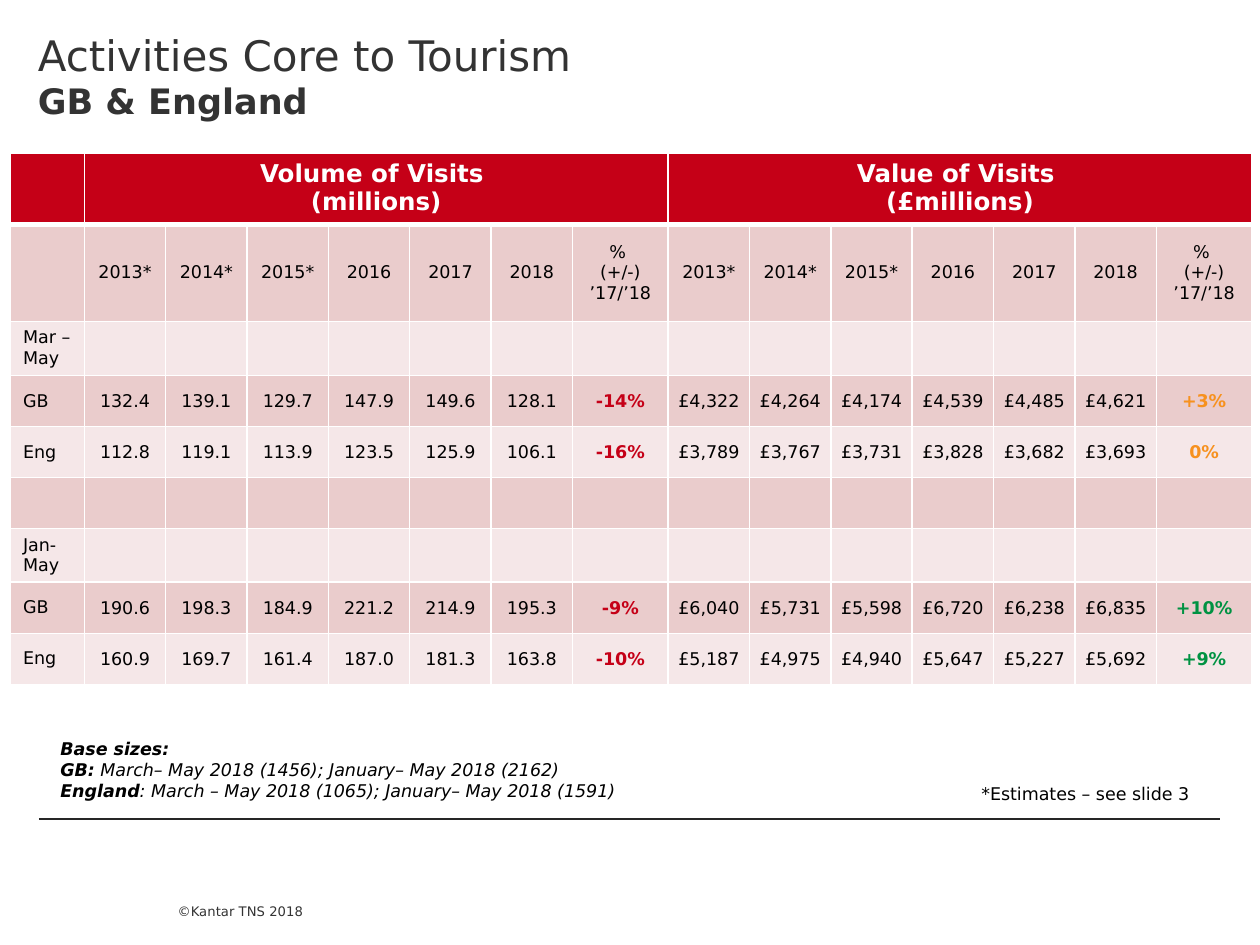
from dataclasses import dataclass
from typing import NamedTuple

from lxml.etree import SubElement
from pptx import Presentation
from pptx.dml.color import RGBColor
from pptx.enum.shapes import MSO_CONNECTOR
from pptx.enum.text import MSO_ANCHOR, MSO_AUTO_SIZE, PP_ALIGN
from pptx.oxml.ns import qn
from pptx.util import Pt


@dataclass(frozen=True)
class Theme:
    font: str = "DejaVu Sans"
    red: str = "C50017"
    amber: str = "F7911E"
    green: str = "009242"
    dark_band: str = "EACCCC"
    light_band: str = "F5E7E8"
    white: str = "FFFFFF"
    black: str = "000000"
    gray: str = "333333"
    rule: str = "262626"
    title: float = 24
    subtitle: float = 20
    heading: float = 14
    body: float = 10
    footer: float = 7.5


THEME = Theme()


class Span(NamedTuple):
    text: str
    size: float = THEME.body
    color: str = THEME.black
    bold: bool = False
    italic: bool = False


class Note(NamedTuple):
    box: tuple[float, float, float, float]
    paragraphs: list[list[Span]]
    frame: dict


class Season(NamedTuple):
    label: str
    anchor: MSO_ANCHOR
    regions: list[tuple[str, str, str]]


def margins(left: float, top: float, right: float, bottom: float) -> dict:
    return {"margin_left": Pt(left), "margin_top": Pt(top),
            "margin_right": Pt(right), "margin_bottom": Pt(bottom)}


def apply(target, values: dict) -> None:
    for name, value in values.items():
        setattr(target, name, value)


def write(frame, paragraphs: list[list[Span]], align=PP_ALIGN.LEFT) -> None:
    for index, spans in enumerate(paragraphs):
        para = frame.add_paragraph() if index else frame.paragraphs[0]
        para.alignment = align
        for item in spans:
            for part, line in enumerate(item.text.split("\n")):
                if part:
                    para.add_line_break()
                span = para.add_run()
                span.text = line
                apply(span.font, {"name": THEME.font, "size": Pt(item.size),
                                  "bold": item.bold, "italic": item.italic})
                span.font.color.rgb = RGBColor.from_string(item.color)


def add_note(page, note: Note) -> None:
    box = page.shapes.add_textbox(*map(Pt, note.box))
    apply(box.text_frame, note.frame)
    write(box.text_frame, note.paragraphs)


def style_cell(cell, fill: str, top: float, bottom: float) -> None:
    properties = cell._tc.get_or_add_tcPr()
    for side, width in {"lnL": 1, "lnR": 1, "lnT": top, "lnB": bottom}.items():
        line = SubElement(properties, qn(f"a:{side}"), w=str(Pt(width)))
        solid = SubElement(line, qn("a:solidFill"))
        SubElement(solid, qn("a:srgbClr"), val=THEME.white)
    cell.fill.solid()
    cell.fill.fore_color.rgb = RGBColor.from_string(fill)


def change_color(text: str) -> str:
    """Falls are red, rises under 5% amber and larger rises green."""
    change = int(text.rstrip("%"))
    return THEME.red if change < 0 else THEME.amber if change < 5 else THEME.green


# Table content and grid
SEASONS = [
    Season("Mar – May", MSO_ANCHOR.TOP, [
        ("GB", "132.4 139.1 129.7 147.9 149.6 128.1 -14%",
         "£4,322 £4,264 £4,174 £4,539 £4,485 £4,621 +3%"),
        ("Eng", "112.8 119.1 113.9 123.5 125.9 106.1 -16%",
         "£3,789 £3,767 £3,731 £3,828 £3,682 £3,693 0%")]),
    Season("Jan-May", MSO_ANCHOR.MIDDLE, [
        ("GB", "190.6 198.3 184.9 221.2 214.9 195.3 -9%",
         "£6,040 £5,731 £5,598 £6,720 £6,238 £6,835 +10%"),
        ("Eng", "160.9 169.7 161.4 187.0 181.3 163.8 -10%",
         "£5,187 £4,975 £4,940 £5,647 £5,227 £5,692 +9%")]),
]
MEASURES = [("Volume of Visits ", "(millions)"), ("Value of Visits ", "(£millions)")]
YEARS = ["2013*", "2014*", "2015*", "2016", "2017", "2018"]
BLOCK = len(YEARS) + 1
COLUMNS = [42.2] + ([46.5] * len(YEARS) + [54.7]) * len(MEASURES)
ROWS = [41, 55.2, 31] + [29.2] * 6
WIDE = margins(7.2, 3.6, 7.2, 3.6)
TIGHT = margins(0.72, 0.72, 0.72, 0)


def fill_cell(cell, paragraphs: list[list[Span]], space: dict,
              align=PP_ALIGN.CENTER, anchor=MSO_ANCHOR.MIDDLE) -> None:
    apply(cell, space | {"vertical_anchor": anchor})
    write(cell.text_frame, paragraphs, align)


def add_visits_table(page) -> None:
    table = page.shapes.add_table(len(ROWS), len(COLUMNS), Pt(6), Pt(87.4),
                                  Pt(sum(COLUMNS)), Pt(sum(ROWS))).table
    apply(table, {"first_row": False, "horz_banding": False})
    for column, width in zip(table.columns, COLUMNS):
        column.width = Pt(width)

    # Bands and borders
    for index, (row, height) in enumerate(zip(table.rows, ROWS)):
        row.height = Pt(height)
        fill = THEME.dark_band if index % 2 else THEME.light_band
        for cell in row.cells:
            apply(cell, TIGHT)
            style_cell(cell, fill if index else THEME.red,
                       3 if index == 1 else 1, 1 if index else 3)

    # Headings for each measure
    for block, lines in enumerate(MEASURES):
        first = 1 + block * BLOCK
        table.cell(0, first).merge(table.cell(0, first + BLOCK - 1))
        heading = [[Span(line, THEME.heading, THEME.white, True)] for line in lines]
        fill_cell(table.cell(0, first), heading, WIDE, anchor=MSO_ANCHOR.TOP)
        labels = [[year] for year in YEARS] + [["% ", "(+/-) ’17/’18"]]
        for offset, label in enumerate(labels):
            fill_cell(table.cell(1, first + offset), [[Span(line)] for line in label], WIDE)

    # Seasons, with an empty row between them
    for number, season in enumerate(SEASONS):
        start = 2 + number * 4
        fill_cell(table.cell(start, 0), [[Span(season.label)]], WIDE,
                  PP_ALIGN.LEFT, season.anchor)
        for row, (region, volumes, values) in enumerate(season.regions, start + 1):
            fill_cell(table.cell(row, 0), [[Span(region)]], WIDE, PP_ALIGN.LEFT)
            for column, text in enumerate(volumes.split() + values.split(), 1):
                span = Span(text)
                if text.endswith("%"):
                    span = Span(text, color=change_color(text), bold=True)
                fill_cell(table.cell(row, column), [[span]], TIGHT)


NOTES = [
    Note((101.5, 498.2, 77, 41.8),
         [[Span("©Kantar TNS 2018", THEME.footer, THEME.gray)]],
         margins(0, 0, 0, 20.9) | {"vertical_anchor": MSO_ANCHOR.BOTTOM, "word_wrap": False}),
    Note((27.4, 418.3, 607.7, 43.9),
         [[Span("Base sizes: \nGB:", bold=True, italic=True),
           Span(" March– May 2018 (1456); January– May 2018 (2162)", italic=True)],
          [Span("England", bold=True, italic=True),
           Span(": March – May 2018 (1065); January– May 2018 (1591)", italic=True)]],
         {"word_wrap": True, "auto_size": MSO_AUTO_SIZE.SHAPE_TO_FIT_TEXT}),
    Note((553.7, 444.2, 138.2, 19.4), [[Span("*Estimates – see slide 3")]],
         {"word_wrap": False, "auto_size": MSO_AUTO_SIZE.SHAPE_TO_FIT_TEXT}),
]


def main() -> None:
    deck = Presentation()
    apply(deck, {"slide_width": Pt(720), "slide_height": Pt(540)})
    page = deck.slides.add_slide(deck.slide_layouts[5])

    # Title
    title = page.shapes.title
    apply(title, {"left": Pt(0), "top": Pt(0), "width": Pt(399.6), "height": Pt(100.8)})
    apply(title.text_frame, margins(21.6, 16.6, 21.6, 0) | {
        "vertical_anchor": MSO_ANCHOR.TOP, "word_wrap": True, "auto_size": MSO_AUTO_SIZE.NONE})
    write(title.text_frame, [[Span("Activities Core to Tourism\n", THEME.title, THEME.gray),
                              Span("GB & England", THEME.subtitle, THEME.gray, True)]])

    # Rule above the footer
    rule = page.shapes.add_connector(MSO_CONNECTOR.STRAIGHT, Pt(22.3), Pt(468), Pt(697), Pt(468))
    rule.line.width = Pt(0.75)
    rule.line.color.rgb = RGBColor.from_string(THEME.rule)
    SubElement(rule._element.spPr, qn("a:effectLst"))

    add_visits_table(page)
    for note in NOTES:
        add_note(page, note)
    deck.save("out.pptx")


if __name__ == "__main__":
    main()
